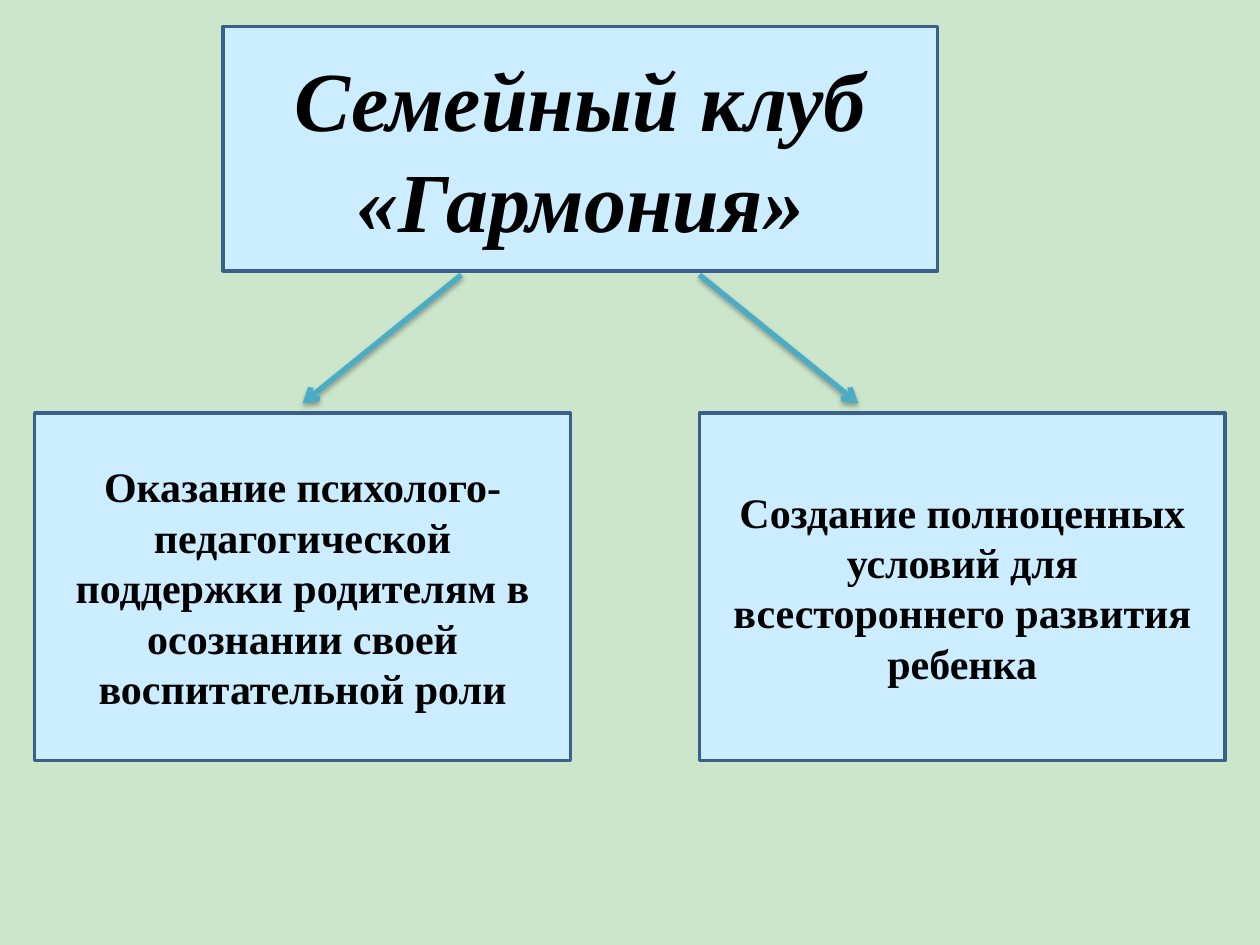
import lxml.etree
import pptx
import pptx.dml.color
import pptx.enum.shapes
import pptx.enum.text
import pptx.oxml
import pptx.oxml.ns
import pptx.util
from pptx.util import Cm

BACKGROUND = pptx.dml.color.RGBColor(0xCC, 0xE6, 0xCC)
BOX_FILL = pptx.dml.color.RGBColor(0xCC, 0xEC, 0xFF)
BOX_BORDER = pptx.dml.color.RGBColor(0x3A, 0x5F, 0x8C)
ARROW = pptx.dml.color.RGBColor(0x4B, 0xAC, 0xC6)
BLACK = pptx.dml.color.RGBColor(0, 0, 0)

SHADOW = (
    f'<a:effectLst {pptx.oxml.ns.nsdecls("a")}>'
    '<a:outerShdw blurRad="40000" dist="23000" dir="5400000" rotWithShape="0">'
    '<a:srgbClr val="000000"><a:alpha val="35000"/></a:srgbClr>'
    '</a:outerShdw></a:effectLst>'
)


def format_box(box, text, size, italic=None):
    box.shadow.inherit = False
    box.fill.solid()
    box.fill.fore_color.rgb = BOX_FILL
    box.line.color.rgb = BOX_BORDER
    box.line.width = pptx.util.Pt(2)
    frame = box.text_frame
    frame.word_wrap = True
    frame.auto_size = pptx.enum.text.MSO_AUTO_SIZE.NONE
    frame.vertical_anchor = pptx.enum.text.MSO_ANCHOR.MIDDLE
    frame.text = text
    paragraph = frame.paragraphs[0]
    paragraph.alignment = pptx.enum.text.PP_ALIGN.CENTER
    paragraph.font.name = "Times New Roman"
    paragraph.font.size = pptx.util.Pt(size)
    paragraph.font.bold = True
    paragraph.font.italic = italic
    paragraph.font.color.rgb = BLACK


presentation = pptx.Presentation()
presentation.slide_width = Cm(25.4)
presentation.slide_height = Cm(19.05)
slide = presentation.slides.add_slide(presentation.slide_layouts[5])
slide.background.fill.solid()
slide.background.fill.fore_color.rgb = BACKGROUND

club = slide.shapes.title
club.left, club.top, club.width, club.height = Cm(4.5), Cm(0.53), Cm(14.4), Cm(4.93)
format_box(club, "Семейный клуб «Гармония»", 48, italic=True)

# Arrows run from the club box down to its two goals
for start_x, end_x in ((14.1, 17.3), (9.3, 6.1)):
    arrow = slide.shapes.add_connector(
        pptx.enum.shapes.MSO_CONNECTOR.STRAIGHT,
        Cm(start_x), Cm(5.54), Cm(end_x), Cm(8.13))
    arrow.line.color.rgb = ARROW
    arrow.line.width = pptx.util.Pt(3)
    properties = arrow._element.spPr
    outline = properties.find(pptx.oxml.ns.qn("a:ln"))
    lxml.etree.SubElement(outline, pptx.oxml.ns.qn("a:tailEnd"), type="arrow")
    properties.append(pptx.oxml.parse_xml(SHADOW))

goals = (
    (0.7, 10.8, "Оказание психолого-педагогической поддержки родителям "
                "в осознании своей воспитательной роли"),
    (14.1, 10.6, "Создание полноценных условий для всестороннего "
                 "развития ребенка"),
)
for left, width, text in goals:
    goal = slide.shapes.add_shape(
        pptx.enum.shapes.MSO_SHAPE.RECTANGLE, Cm(left), Cm(8.33), Cm(width), Cm(7))
    format_box(goal, text, 24)

presentation.save("out.pptx")
